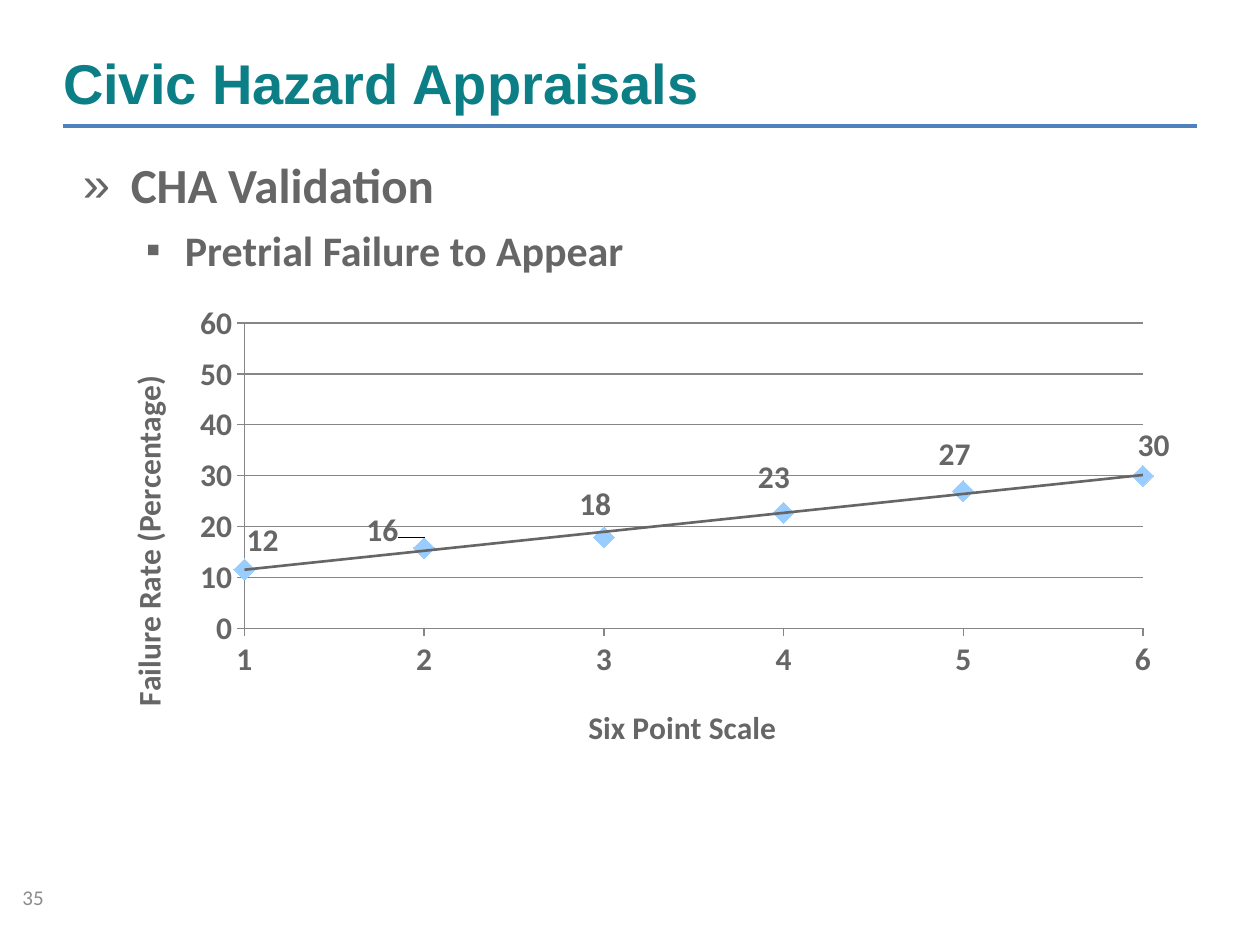
from dataclasses import dataclass

from lxml.etree import SubElement
from pptx import Presentation
from pptx.chart.data import XyChartData
from pptx.dml.color import RGBColor
from pptx.enum.chart import XL_CHART_TYPE, XL_LABEL_POSITION, XL_MARKER_STYLE, XL_TICK_MARK
from pptx.enum.shapes import MSO_CONNECTOR
from pptx.enum.text import MSO_ANCHOR, PP_ALIGN
from pptx.oxml import parse_xml
from pptx.oxml.ns import nsdecls, qn
from pptx.util import Pt

PX = 9144  # 100 px to the inch


@dataclass(frozen=True)
class Theme:
    head: str = "Arial"
    body: str = "Calibri"
    teal: str = "0B7E86"
    blue: str = "4F81BD"
    sky: str = "99CCFF"
    ink: str = "666666"
    grid: str = "868686"
    pale: str = "8C8C8C"
    white: str = "FFFFFF"
    title: int = 32
    main: int = 28
    sub: int = 24
    label: int = 18
    small: int = 12


THEME = Theme()
# Score, failure rate, and the shift of its label in thousandths of the chart
POINTS = [
    (1, 11.6, 17, 11),
    (2, 15.8, -39, 36),
    (3, 17.9, -8, 4),
    (4, 22.7, -9, -2),
    (5, 27, -8, -4),
    (6, 30, 10, 8),
]


def emu(*px):
    return [n * PX for n in px]


def rgb(code):
    return RGBColor.from_string(code)


def style(font, size, color, face=THEME.body, bold=True):
    font.name, font.size, font.bold = face, Pt(size), bold
    font.color.rgb = rgb(color)


def stroke(line, color, width):
    line.color.rgb = rgb(color)
    line.width = Pt(width)


def layout(x, y, w=None, h=None):
    """Make a manual chart layout; with a size it places the inner plot."""
    parts = []
    if w:
        parts += [("layoutTarget", "inner")]
    if w is not None or h is not None:
        parts += [("xMode", "edge"), ("yMode", "edge")]
    parts += [("x", x), ("y", y)]
    if w:
        parts += [("w", w), ("h", h)]
    body = "".join(f'<c:{tag} val="{val}"/>' for tag, val in parts)
    return parse_xml(f'<c:layout {nsdecls("c")}><c:manualLayout>{body}'
                     "</c:manualLayout></c:layout>")


def add_title(slide, x, y, w, h):
    title = slide.shapes.title
    title.left, title.top, title.width, title.height = emu(x, y, w, h)
    frame = title.text_frame
    frame.text = "Civic Hazard Appraisals"
    frame.margin_left = frame.margin_right = 0
    frame.margin_top = frame.margin_bottom = 0
    frame.vertical_anchor = MSO_ANCHOR.MIDDLE
    para = frame.paragraphs[0]
    para.alignment = PP_ALIGN.LEFT
    style(para.runs[0].font, THEME.title, THEME.teal, THEME.head)

    rule = slide.shapes.add_connector(MSO_CONNECTOR.STRAIGHT, *emu(x, y + h, x + w, y + h))
    stroke(rule.line, THEME.blue, 2.5)
    SubElement(rule._element.spPr, qn("a:effectLst"))


def add_points(slide, x, y, w, h):
    frame = slide.shapes.add_textbox(*emu(x, y, w, h)).text_frame
    frame.word_wrap = True
    rows = [("CHA Validation", "»", THEME.main, 38, 38),
            ("Pretrial Failure to Appear", "▪", THEME.sub, 81, 31)]
    for i, (text, mark, size, left, hang) in enumerate(rows):
        para = frame.add_paragraph() if i else frame.paragraphs[0]
        para.text, para.level, para.space_after = text, i, Pt(6)
        props = para._p.get_or_add_pPr()
        props.set("marL", str(left * PX))
        props.set("indent", str(-hang * PX))
        SubElement(props, qn("a:buFont")).set("typeface", THEME.head)
        SubElement(props, qn("a:buChar")).set("char", mark)
        style(para.runs[0].font, size, THEME.ink)


def set_axis(axis, title, low, high, step, spot):
    axis.minimum_scale, axis.maximum_scale, axis.major_unit = low, high, step
    axis.major_tick_mark = XL_TICK_MARK.OUTSIDE
    axis.minor_tick_mark = XL_TICK_MARK.NONE
    axis.tick_labels.number_format = "0"
    axis.tick_labels.number_format_is_linked = False
    style(axis.tick_labels.font, THEME.label, THEME.ink)
    stroke(axis.format.line, THEME.grid, 0.75)
    frame = axis.axis_title.text_frame
    frame.text = title
    style(frame.paragraphs[0].runs[0].font, THEME.label, THEME.ink)
    node = axis.axis_title._element
    for old in node.findall(qn("c:layout")):
        node.remove(old)
    node.find(qn("c:tx")).addnext(layout(*spot, h=0))


def add_trend(series):
    trend = parse_xml(
        f'<c:trendline {nsdecls("c", "a")}><c:spPr><a:ln w="{Pt(1.5)}"><a:solidFill>'
        f'<a:srgbClr val="{THEME.ink}"/></a:solidFill></a:ln></c:spPr>'
        '<c:trendlineType val="linear"/><c:dispRSqr val="0"/><c:dispEq val="0"/>'
        "</c:trendline>")
    series._element.find(qn("c:xVal")).addprevious(trend)


def add_labels(series):
    for i, (_, _, dx, dy) in enumerate(POINTS):
        label = series.points[i].data_label
        style(label.font, THEME.label, THEME.ink)
        label.position = XL_LABEL_POSITION.ABOVE
    nodes = series._element.findall(".//" + qn("c:dLbl"))
    for node, (_, _, dx, dy) in zip(nodes, POINTS):
        form = parse_xml(f'<c:numFmt {nsdecls("c")} formatCode="0" sourceLinked="0"/>')
        index = node.find(qn("c:idx"))
        index.addnext(form)
        index.addnext(layout(dx / 1000, dy / 1000))


def add_graph(slide, x, y, w, h):
    data = XyChartData()
    rates = data.add_series("Series 1")
    for score, rate, *_ in POINTS:
        rates.add_data_point(score, rate)
    chart = slide.shapes.add_chart(XL_CHART_TYPE.XY_SCATTER, *emu(x, y, w, h), data).chart
    chart.has_legend = chart.has_title = False
    style(chart.font, THEME.label, THEME.ink)

    set_axis(chart.category_axis, "Six Point Scale", 1, 6, 1, (0.45, 0.86))
    set_axis(chart.value_axis, "Failure Rate (Percentage)", 0, 60, 10, (0.02, 0.16))
    chart.category_axis.has_major_gridlines = False
    chart.value_axis.has_major_gridlines = True
    stroke(chart.value_axis.major_gridlines.format.line, THEME.grid, 0.75)

    plot = chart.plots[0]
    plot.vary_by_categories = False
    area = plot._element.getparent()
    for old in area.findall(qn("c:layout")):
        area.remove(old)
    area.insert(0, layout(0.135, 0.06, 0.837, 0.648))

    series = plot.series[0]
    series.format.line.fill.background()
    marker = series.marker
    marker.style, marker.size = XL_MARKER_STYLE.DIAMOND, 12
    marker.format.fill.solid()
    marker.format.fill.fore_color.rgb = rgb(THEME.sky)
    marker.format.line.fill.background()
    add_labels(series)
    add_trend(series)


def add_number(slide, x, y, w, h):
    frame = slide.shapes.add_textbox(*emu(x, y, w, h)).text_frame
    frame.word_wrap = True
    frame.vertical_anchor = MSO_ANCHOR.MIDDLE
    frame.text = "35"
    style(frame.paragraphs[0].runs[0].font, THEME.small, THEME.pale, bold=False)


def main():
    deck = Presentation()
    deck.slide_width, deck.slide_height = emu(1000, 750)
    slide = deck.slides.add_slide(deck.slide_layouts[5])
    slide.background.fill.solid()
    slide.background.fill.fore_color.rgb = rgb(THEME.white)
    add_title(slide, 50, 30, 900, 70)
    add_points(slide, 56, 118, 876, 456)
    add_graph(slide, 79, 234, 852, 374)
    add_number(slide, 8, 692, 233, 40)
    deck.save("out.pptx")


if __name__ == "__main__":
    main()
